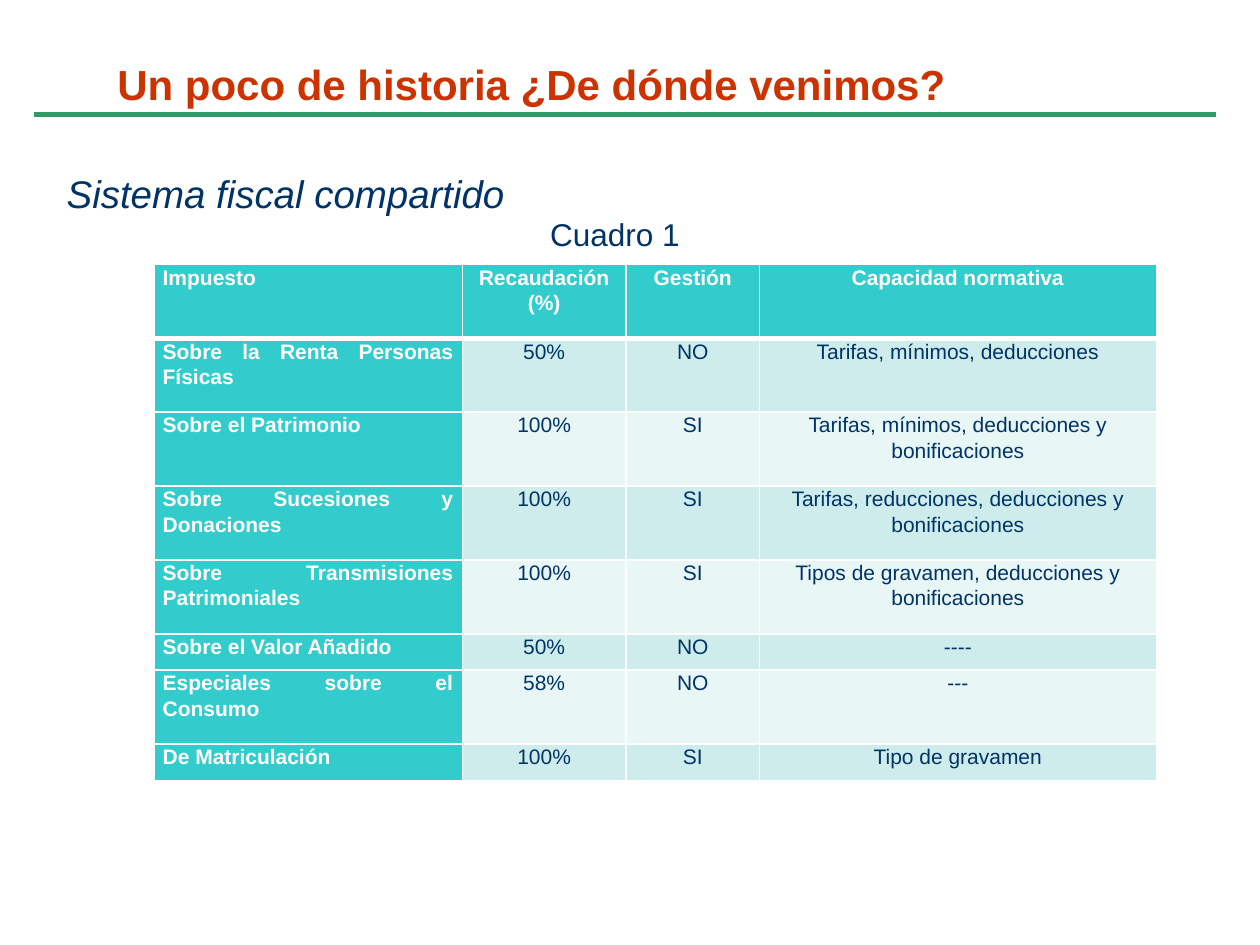
import pptx
import pptx.dml.color
import pptx.enum.shapes
import pptx.enum.text
import pptx.oxml.ns
import pptx.util
import lxml.etree

Cm = pptx.util.Cm
Pt = pptx.util.Pt
ALIGN = pptx.enum.text.PP_ALIGN
ANCHOR = pptx.enum.text.MSO_ANCHOR
COLORS = {
    "title": "CC3300",
    "text": "003366",
    "rule": "339966",
    "header": "33CCCC",
    "odd_row": "CEECEC",
    "even_row": "E8F6F6",
    "white": "FFFFFF",
}
TAXES = [
    ("Impuesto", "Recaudación (%)", "Gestión", "Capacidad normativa"),
    ("Sobre la Renta Personas Físicas", "50%", "NO", "Tarifas, mínimos, deducciones"),
    ("Sobre el Patrimonio", "100%", "SI", "Tarifas, mínimos, deducciones y bonificaciones"),
    ("Sobre Sucesiones y Donaciones", "100%", "SI",
     "Tarifas, reducciones, deducciones y bonificaciones"),
    ("Sobre Transmisiones Patrimoniales", "100%", "SI",
     "Tipos de gravamen, deducciones y bonificaciones"),
    ("Sobre el Valor Añadido", "50%", "NO", "----"),
    ("Especiales sobre el Consumo", "58%", "NO", "---"),
    ("De Matriculación", "100%", "SI", "Tipo de gravamen"),
]
COLUMN_WIDTHS = [6.22, 3.3, 2.69, 8]
TALL_ROW, SHORT_ROW = 1.49, 0.73
SHORT_TAXES = ("Sobre el Valor Añadido", "De Matriculación")


class SlideBuilder:
    """Holds the style and the current slide, with a method for each kind of element."""

    def __init__(self, deck, font="Arial"):
        self.font = font
        self.slide = deck.slides.add_slide(deck.slide_layouts[1])

    def color(self, name):
        return pptx.dml.color.RGBColor.from_string(COLORS[name])

    def format(self, para, size, color, align, spacing, bold=False, italic=False):
        para.alignment = align
        para.line_spacing = spacing
        for span in para.runs:
            span.font.name = self.font
            span.font.size = Pt(size)
            span.font.bold = bold
            span.font.italic = italic
            span.font.color.rgb = self.color(color)

    def place(self, box, left, top, width, height):
        box.left, box.top, box.width, box.height = map(Cm, (left, top, width, height))
        box.text_frame.auto_size = pptx.enum.text.MSO_AUTO_SIZE.NONE
        return box.text_frame

    def title(self, text, *bounds):
        frame = self.place(self.slide.shapes.title, *bounds)
        frame.text = text
        frame.vertical_anchor = ANCHOR.BOTTOM
        self.format(frame.paragraphs[0], 24, "title", ALIGN.LEFT, 0.9, bold=True)

    def body(self, lines, top_margin, *bounds):
        frame = self.place(self.slide.placeholders[1], *bounds)
        frame.margin_top = Cm(top_margin)
        frame.text = "\n".join(text for text, *_ in lines)
        for para, (_, size, align, italic) in zip(frame.paragraphs, lines):
            self.format(para, size, "text", align, 0.8, italic=italic)
            para.space_before = Pt(size * 0.2)
            properties = para._p.get_or_add_pPr()
            properties.set("marL", "0")
            properties.set("indent", "0")
            lxml.etree.SubElement(properties, pptx.oxml.ns.qn("a:buNone"))

    def rule(self, left, right, y, color, weight):
        line = self.slide.shapes.add_connector(
            pptx.enum.shapes.MSO_CONNECTOR.STRAIGHT, Cm(left), Cm(y), Cm(right), Cm(y))
        line.line.color.rgb = self.color(color)
        line.line.width = Pt(weight)
        lxml.etree.SubElement(line._element.spPr, pptx.oxml.ns.qn("a:effectLst"))

    def border(self, cell, side, weight):
        properties = cell._tc.get_or_add_tcPr()
        edge = lxml.etree.SubElement(
            properties, pptx.oxml.ns.qn("a:ln" + side), w=str(Pt(weight)))
        fill = lxml.etree.SubElement(edge, pptx.oxml.ns.qn("a:solidFill"))
        lxml.etree.SubElement(fill, pptx.oxml.ns.qn("a:srgbClr"), val=COLORS["white"])

    def cell(self, cell, text, row, column):
        heading = row == 0 or column == 0
        cell.margin_left = cell.margin_right = Cm(0.18)
        cell.margin_top = cell.margin_bottom = 0
        cell.vertical_anchor = ANCHOR.TOP
        for side in "LRTB":
            thick = (row, side) in ((0, "B"), (1, "T"))
            self.border(cell, side, 3 if thick else 1)
        cell.fill.solid()
        band = "odd_row" if row % 2 else "even_row"
        cell.fill.fore_color.rgb = self.color("header" if heading else band)
        cell.text_frame.text = text
        self.format(cell.text_frame.paragraphs[0], 12, "white" if heading else "text",
                    ALIGN.CENTER if column else ALIGN.JUSTIFY, 1.07, bold=heading)

    def table(self, rows, widths, heights, left, top):
        table = self.slide.shapes.add_table(
            len(rows), len(widths), Cm(left), Cm(top),
            Cm(sum(widths)), Cm(sum(heights))).table
        for column, width in zip(table.columns, widths):
            column.width = Cm(width)
        for row, height in zip(table.rows, heights):
            row.height = Cm(height)
        for r, texts in enumerate(rows):
            for c, text in enumerate(texts):
                self.cell(table.cell(r, c), text, r, c)


def main():
    deck = pptx.Presentation()
    deck.slide_width, deck.slide_height = Cm(25.4), Cm(19.05)
    page = SlideBuilder(deck)
    page.rule(0.69, 24.51, 2.31, "rule", 3)
    page.title("Un poco de historia ¿De dónde venimos?", 2.11, 0.33, 22.02, 2.01)
    page.body([("Sistema fiscal compartido", 22, ALIGN.LEFT, True),
               ("Cuadro 1", 18, ALIGN.CENTER, False)],
              1.1, 1.09, 2.51, 22.61, 15.39)
    heights = [SHORT_ROW if tax[0] in SHORT_TAXES else TALL_ROW for tax in TAXES]
    page.table(TAXES, COLUMN_WIDTHS, heights, 3.1, 5.33)
    deck.save("out.pptx")


if __name__ == "__main__":
    main()
